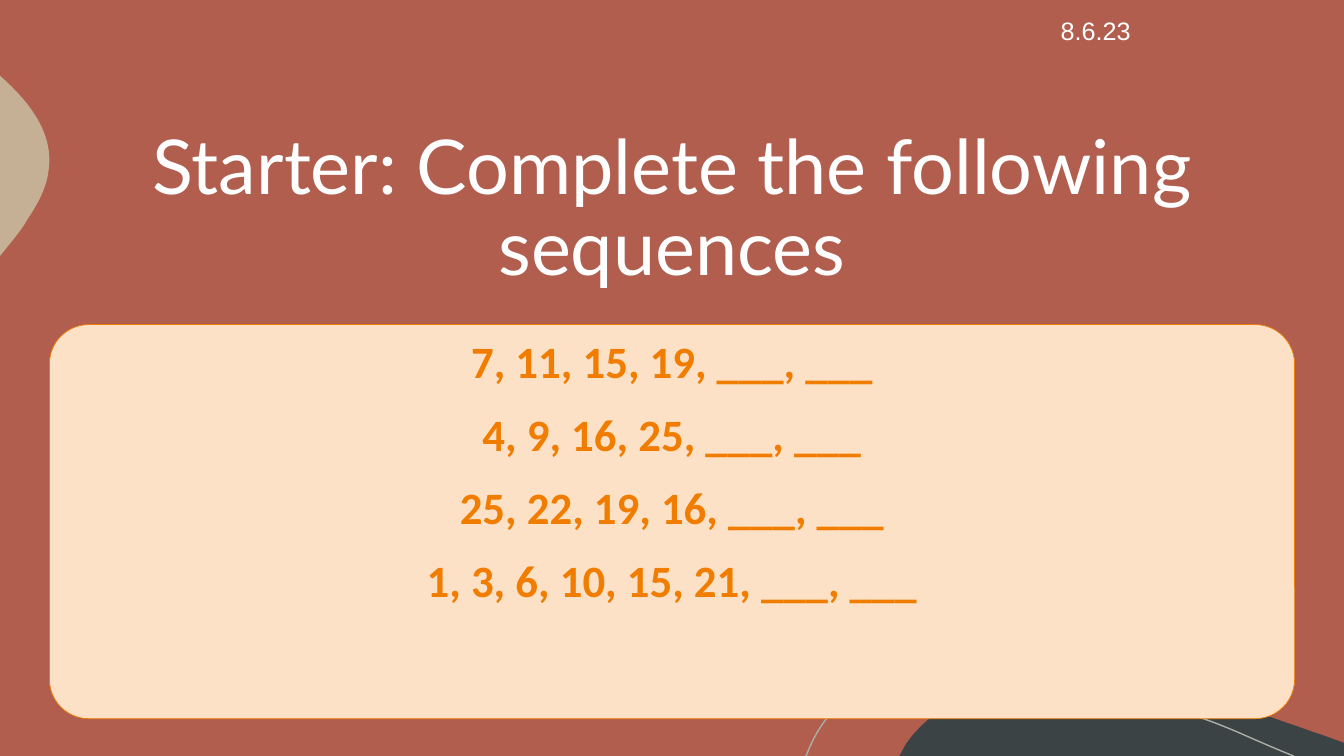
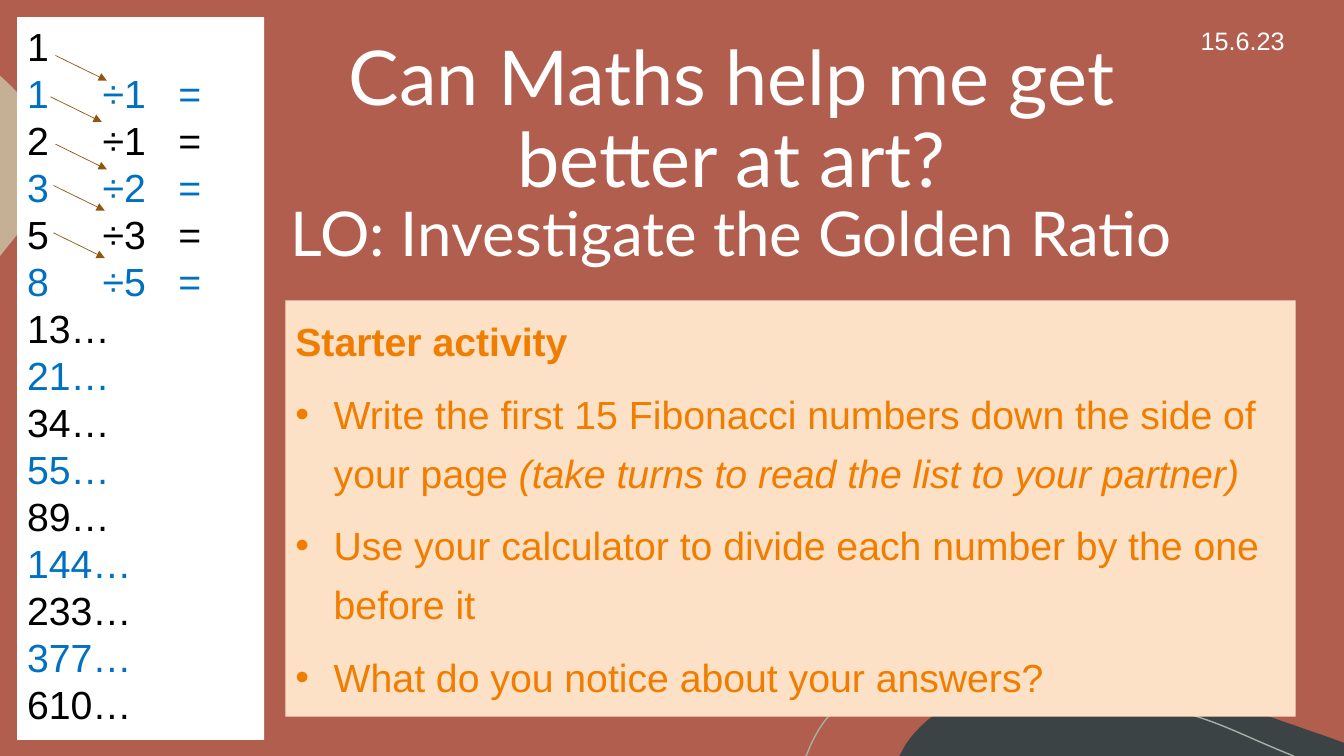
from lxml.etree import SubElement
from pptx import Presentation
from pptx.dml.color import RGBColor
from pptx.enum.shapes import MSO_CONNECTOR, MSO_SHAPE
from pptx.enum.text import MSO_ANCHOR, MSO_AUTO_SIZE, PP_ALIGN
from pptx.oxml.ns import qn
from pptx.util import Inches, Pt

RUST, SLATE, SAND, GREY = "B15E4E", "3B4345", "C5B096", "A9AEA7"
PEACH, ORANGE, BROWN = "FDE1C6", "F07D00", "905710"
WHITE, BLACK, BLUE = "FFFFFF", "000000", "0070C0"

# Content
STARTER_TITLE = [("Starter: Complete the following sequences", 54)]
SEQUENCES = ["7, 11, 15, 19, ___, ___", "4, 9, 16, 25, ___, ___",
             "25, 22, 19, 16, ___, ___", "1, 3, 6, 10, 15, 21, ___, ___"]
RATIO_TITLE = [("Can Maths help me get better at art?", 54),
               ("LO: Investigate the Golden Ratio", 44.1)]
ACTIVITY_HEAD = "Starter activity"
ACTIVITY = [  # (plain text, italic text)
    ("Write the first 15 Fibonacci numbers down the side of your page ",
     "(take turns to read the list to your partner)"),
    ("Use your calculator to divide each number by the one before it", ""),
    ("What do you notice about your answers?", ""),
]
FIBONACCI = [1, 1, 2, 3, 5, 8, 13, 21, 34, 55, 89, 144, 233, 377, 610]
DIVIDED = 6  # rows up to here show their division
ARROW_STARTS = [(0.55, 0.55), (0.5, 0.96), (0.53, 1.84), (0.55, 1.43), (0.53, 2.31)]
ARROW_STEP = (0.51, 0.25)

# Background outlines: a start, then points (2 numbers) or curves (6 numbers)
HILL = [(10.54, 6.83), (11.28, 6.83, 12.04, 6.9, 12.73, 7.16),
        (12.86, 7.2, 12.98, 7.25, 13.11, 7.29), (13.33, 7.37), (13.33, 7.5),
        (8.92, 7.5), (8.98, 7.39), (9.02, 7.33, 9.06, 7.28, 9.11, 7.23),
        (9.39, 6.93, 9.82, 6.84, 10.23, 6.83), (10.33, 6.83, 10.43, 6.83, 10.54, 6.83)]
PEBBLE = [(0, 0.75), (0.01, 0.76), (0.3, 1.02, 0.54, 1.33, 0.48, 1.7),
          (0.46, 1.87, 0.37, 2.03, 0.27, 2.18), (0.24, 2.24, 0.17, 2.33, 0.08, 2.44),
          (0, 2.54)]
WAVE = [(7.99, 7.5), (8, 7.49), (8.06, 7.33, 8.14, 7.19, 8.24, 7.08),
        (8.5, 6.81, 8.89, 6.73, 9.26, 6.72), (9.55, 6.72),
        (10.22, 6.72, 11, 6.89, 11.55, 7.02), (12.09, 7.15, 12.26, 7.27, 12.83, 7.5)]
UNITS = 100  # outline units per inch


def rgb(color):
    return RGBColor.from_string(color)


def paint(shape, fill=None, line=None, width=1):
    if fill:
        shape.fill.solid()
        shape.fill.fore_color.rgb = rgb(fill)
    else:
        shape.fill.background()
    if line:
        shape.line.color.rgb = rgb(line)
        shape.line.width = Pt(width)
    else:
        shape.line.fill.background()


def style(p, size, font, color, bold=False):
    for r in p.runs:
        r.font.size, r.font.name, r.font.bold = Pt(size), font, bold
        r.font.color.rgb = rgb(color)


def place(shape, box):
    shape.left, shape.top, shape.width, shape.height = map(Inches, box)


def add_outline(s, outline, closed):
    """Build the outline from its corner points, then bend the curved segments."""
    segments = [[round(v * UNITS) for v in seg] for seg in outline]
    pts = [seg[-2:] for seg in segments]
    builder = s.shapes.build_freeform(*pts[0], scale=Inches(1) / UNITS)
    builder.add_line_segments(pts[1:], close=closed)
    sp = builder.convert_to_shape()
    left, top = (min(axis) for axis in zip(*pts))
    for el, seg in zip(list(sp._element.iter(qn("a:lnTo"))), segments[1:]):
        if len(seg) == 6:
            el.tag = qn("a:cubicBezTo")
            for i, k in enumerate((0, 2)):
                pt = SubElement(el, qn("a:pt"))
                pt.set("x", str(seg[k] - left))
                pt.set("y", str(seg[k + 1] - top))
                el.insert(i, pt)
    return sp


def decorate_master(prs, s):
    """Draw the background shapes on a slide, then move them to the master."""
    master = prs.slide_master
    master.background.fill.solid()
    master.background.fill.fore_color.rgb = rgb(RUST)
    for outline, fill, line in ((HILL, SLATE, None), (PEBBLE, SAND, None),
                                (WAVE, None, GREY)):
        sp = add_outline(s, outline, closed=bool(fill))
        sp.shadow.inherit = False
        paint(sp, fill, line)
        master.shapes._spTree.append(sp._element)


def set_title(s, box, lines):
    title = s.shapes.title
    place(title, box)
    tf = title.text_frame
    tf.text = "\n".join(text for text, _ in lines)
    tf.word_wrap, tf.auto_size = True, MSO_AUTO_SIZE.NONE
    tf.vertical_anchor = MSO_ANCHOR.BOTTOM
    for p, (_, size) in zip(tf.paragraphs, lines):
        p.alignment, p.line_spacing = PP_ALIGN.CENTER, 0.9
        style(p, size, "Lato", WHITE)


def set_body(s, box, lines):
    body = s.placeholders[1]
    place(body, box)
    tf = body.text_frame
    tf.text = "\n".join(lines)
    tf.auto_size, tf.vertical_anchor = MSO_AUTO_SIZE.NONE, MSO_ANCHOR.TOP
    return body


def set_bullet(p, char=None, indent=0.0):
    pPr = p._p.get_or_add_pPr()
    pPr.set("marL", str(Inches(indent)))
    pPr.set("indent", str(-Inches(indent)))
    if char:
        SubElement(pPr, qn("a:buFont")).set("typeface", "Arial")
        SubElement(pPr, qn("a:buChar")).set("char", char)
    else:
        SubElement(pPr, qn("a:buNone"))


def add_date(s, box, text):
    tf = s.shapes.add_textbox(*map(Inches, box)).text_frame
    tf.text, tf.word_wrap = text, True
    style(tf.paragraphs[0], 18, "Arial", WHITE)


def add_number_list(s):
    sp = s.shapes.add_textbox(*map(Inches, (0.17, 0.17, 2.45, 7.17)))
    paint(sp, WHITE)
    rows = []
    for i, n in enumerate(FIBONACCI):
        if 0 < i < DIVIDED:
            rows.append(f"{n}\t÷{FIBONACCI[i - 1]}\t=")
        else:
            rows.append(f"{n}…" if i else f"{n}")
    tf = sp.text_frame
    tf.text, tf.word_wrap = "\n".join(rows), True
    for i, p in enumerate(tf.paragraphs):
        style(p, 28, "Arial", BLUE if i % 2 else BLACK)
        p.line_spacing = Pt(33.6)
        tabs = SubElement(p._p.get_or_add_pPr(), qn("a:tabLst"))
        for pos in (0.75, 1.5):
            tab = SubElement(tabs, qn("a:tab"))
            tab.set("pos", str(Inches(pos)))
            tab.set("algn", "l")


def add_arrow(s, x, y):
    dx, dy = ARROW_STEP
    c = s.shapes.add_connector(MSO_CONNECTOR.STRAIGHT,
                               *map(Inches, (x, y, x + dx, y + dy)))
    c.line.color.rgb, c.line.width = rgb(BROWN), Pt(0.5)
    SubElement(c.line._get_or_add_ln(), qn("a:tailEnd")).set("type", "triangle")
    SubElement(c._element.spPr, qn("a:effectLst"))


def starter_slide(s):
    set_title(s, (0.83, 0.5, 11.67, 2.45), STARTER_TITLE)
    box = (0.49, 3.22, 12.35, 3.91)
    panel = s.shapes.add_shape(MSO_SHAPE.ROUNDED_RECTANGLE, *map(Inches, box))
    panel.adjustments[0] = 0.1
    panel.shadow.inherit = False
    paint(panel, PEACH, ORANGE, 0.5)
    s.shapes._spTree.insert(2, panel._element)  # behind the text
    body = set_body(s, (0.49, 3.22, 12.35, 3.2), SEQUENCES)
    for p in body.text_frame.paragraphs:
        p.alignment, p.line_spacing = PP_ALIGN.CENTER, 1.07
        p.space_before, p.space_after = Pt(0), Pt(11.2)
        set_bullet(p)
        style(p, 32, "Calibri", ORANGE, bold=True)
    add_date(s, (10.42, 0.1, 1.02, 0.4), "8.6.23")


def ratio_slide(s):
    set_title(s, (2.35, 0.68, 9.81, 2.05), RATIO_TITLE)
    body = set_body(s, (2.83, 2.98, 10.02, 4.13),
                    [ACTIVITY_HEAD] + [plain for plain, _ in ACTIVITY])
    paint(body, PEACH)
    head, *points = body.text_frame.paragraphs
    for p, (_, aside) in zip(points, ACTIVITY):
        if aside:
            r = p.add_run()
            r.text, r.font.italic = aside, True
    for p in (head, *points):
        p.line_spacing, p.space_before, p.space_after = 1.25, Pt(10), Pt(0)
        set_bullet(p, *(() if p is head else ("•", 0.38)))
        style(p, 28, "Arial", ORANGE, bold=p is head)
    add_date(s, (11.81, 0.2, 1.2, 0.4), "15.6.23")
    add_number_list(s)
    for start in ARROW_STARTS:
        add_arrow(s, *start)


def main():
    prs = Presentation()
    prs.slide_width, prs.slide_height = Inches(13.33), Inches(7.5)
    layout = prs.slide_layouts[1]
    starter, ratio = (prs.slides.add_slide(layout) for _ in range(2))
    decorate_master(prs, starter)
    starter_slide(starter)
    ratio_slide(ratio)
    prs.save("out.pptx")


if __name__ == "__main__":
    main()
